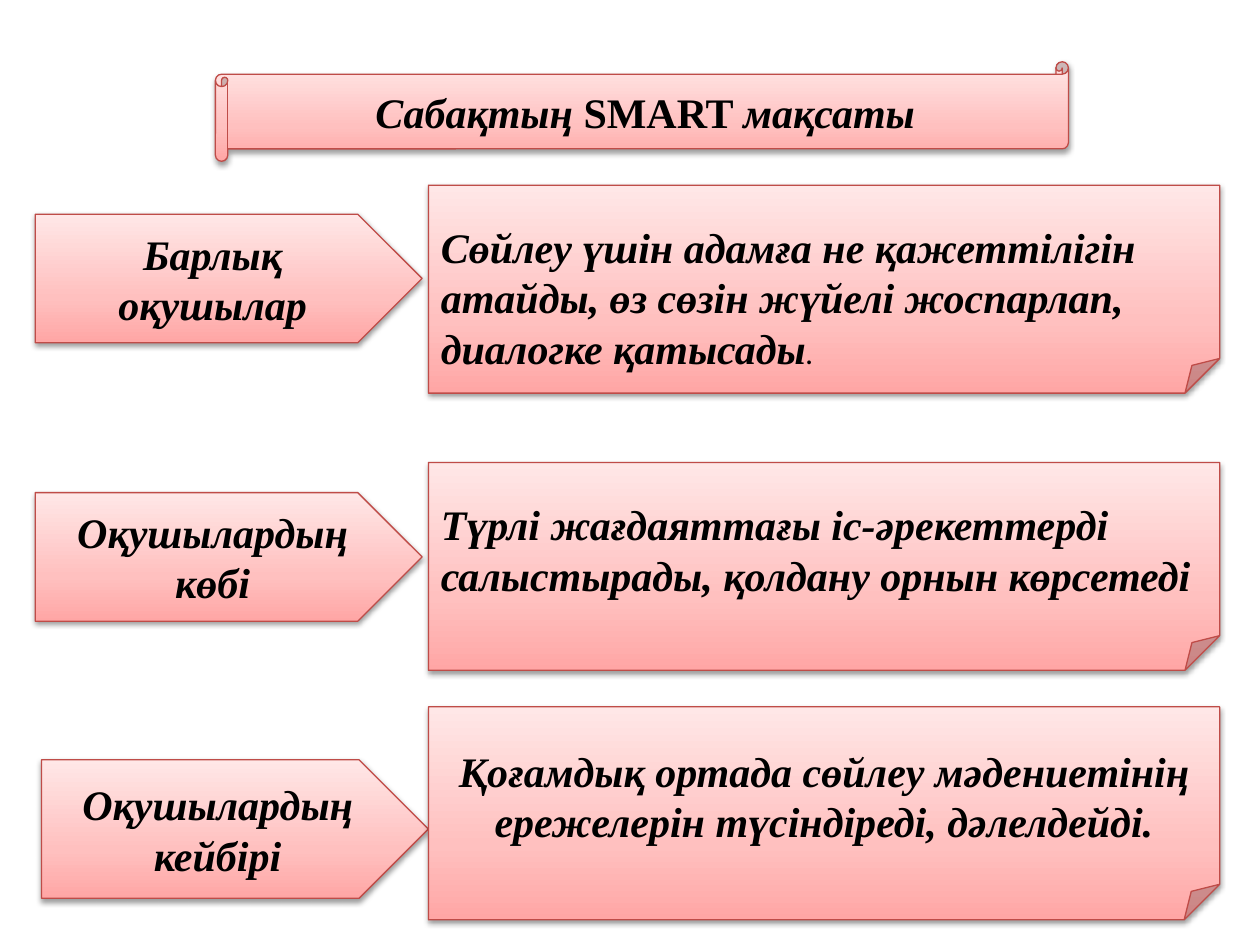
from dataclasses import dataclass

from lxml.etree import SubElement
from pptx import Presentation
from pptx.dml.color import RGBColor
from pptx.enum.shapes import MSO_SHAPE as Shape
from pptx.enum.text import MSO_ANCHOR as Anchor, MSO_AUTO_SIZE as AutoSize, PP_ALIGN as Align
from pptx.oxml.ns import qn
from pptx.util import Inches, Pt


@dataclass(frozen=True)
class Theme:
    font: str = "Times New Roman"
    small_font: str = "Calibri"
    size: int = 24
    small_size: int = 18
    ink: str = "000000"
    outline: str = "BF4C48"
    outline_width: float = 0.75
    gradient: tuple = ((0, "FFA6A5"), (35, "FFC0BF"), (100, "FFE7E7"))
    shadow_opacity: int = 38


@dataclass(frozen=True)
class Span:
    text: str
    bold: bool = True
    italic: bool = True
    font: str = Theme.font
    size: int = Theme.size


@dataclass(frozen=True)
class Panel:
    kind: Shape
    left: float
    top: float
    width: float
    height: float
    spans: tuple = ()
    align: Align = Align.CENTER
    inset_top: float = 0.05


THEME = Theme()
ARROW_WIDTH = 3.07
NOTE_LEFT, NOTE_WIDTH = 3.4, 6.28


def add_color(parent, color: str):
    return SubElement(parent, qn("a:srgbClr"), val=color)


def style_panel(box) -> None:
    """Apply the vertical gradient, the outline and the soft shadow."""
    box.fill.gradient()
    box.fill.gradient_angle = 90
    properties = box._element.spPr
    stops = properties.find(".//" + qn("a:gsLst"))
    for stop in list(stops):
        stops.remove(stop)
    for percent, color in THEME.gradient:
        add_color(SubElement(stops, qn("a:gs"), pos=str(percent * 1000)), color)

    box.line.color.rgb = RGBColor.from_string(THEME.outline)
    box.line.width = Pt(THEME.outline_width)

    box.shadow.inherit = False
    shadow = SubElement(properties.find(qn("a:effectLst")), qn("a:outerShdw"),
                        blurRad=str(Pt(3.1)), dist=str(Pt(1.6)),
                        dir="5400000", rotWithShape="0")
    SubElement(add_color(shadow, THEME.ink), qn("a:alpha"),
               val=str(THEME.shadow_opacity * 1000))


def write_spans(box, spans: tuple, align: Align) -> None:
    frame = box.text_frame
    frame.word_wrap = True
    frame.auto_size = AutoSize.NONE
    frame.vertical_anchor = Anchor.MIDDLE
    para = frame.paragraphs[0]
    para.alignment = align
    for span in spans:
        run = para.add_run()
        run.text = span.text
        font = run.font
        font.name, font.size = span.font, Pt(span.size)
        font.bold, font.italic = span.bold, span.italic
        font.color.rgb = RGBColor.from_string(THEME.ink)


def draw_panel(page, panel: Panel) -> None:
    box = page.shapes.add_shape(panel.kind, Inches(panel.left), Inches(panel.top),
                                Inches(panel.width), Inches(panel.height))
    style_panel(box)
    box.text_frame.margin_top = Inches(panel.inset_top)
    write_spans(box, panel.spans, panel.align)


def draw_title(page, spans: tuple) -> None:
    """Lay the title over the face of a scroll."""
    draw_panel(page, Panel(Shape.HORIZONTAL_SCROLL, 1.71, 0.49, 6.77, 0.79))
    title = page.shapes.title
    title.left, title.top = Inches(1.81), Inches(0.59)
    title.width, title.height = Inches(6.62), Inches(0.59)
    write_spans(title, spans, Align.CENTER)
    # Bring the title in front of the scroll
    page.shapes._spTree.append(title._element)


def arrow(left: float, top: float, height: float, text: str) -> Panel:
    return Panel(Shape.PENTAGON, left, top, ARROW_WIDTH, height, (Span(text),))


def note(top: float, height: float, *spans: Span, align: Align = Align.LEFT,
         inset_top: float = 0.05) -> Panel:
    return Panel(Shape.FOLDED_CORNER, NOTE_LEFT, top, NOTE_WIDTH, height,
                 spans, align, inset_top)


TITLE = (Span("Сабақтың "), Span("SMART ", italic=False), Span("мақсаты"))

PANELS = (
    # Groups of pupils
    arrow(0.28, 1.7, 1.02, "Барлық оқушылар"),
    arrow(0.28, 3.91, 1.02, "Оқушылардың көбі"),
    arrow(0.33, 6.03, 1.1, "Оқушылардың кейбірі"),
    # Goals for each group
    note(1.47, 1.65,
         Span("Сөйлеу үшін адамға не қажеттілігін атайды, өз сөзін жүйелі "
              "жоспарлап, диалогке қатысады"),
         Span(".", bold=False, font=THEME.small_font, size=THEME.small_size),
         inset_top=0.45),
    note(3.67, 1.65,
         Span("Түрлі жағдаяттағы іс-әрекеттерді салыстырады, қолдану орнын көрсетеді")),
    note(5.61, 1.69,
         Span("Қоғамдық ортада сөйлеу мәдениетінің ережелерін түсіндіреді, дәлелдейді."),
         align=Align.CENTER),
)


def main() -> None:
    deck = Presentation()
    deck.slide_width, deck.slide_height = Inches(10), Inches(7.5)
    page = deck.slides.add_slide(deck.slide_layouts.get_by_name("Title Only"))
    draw_title(page, TITLE)
    for panel in PANELS:
        draw_panel(page, panel)
    deck.save("out.pptx")


if __name__ == "__main__":
    main()
